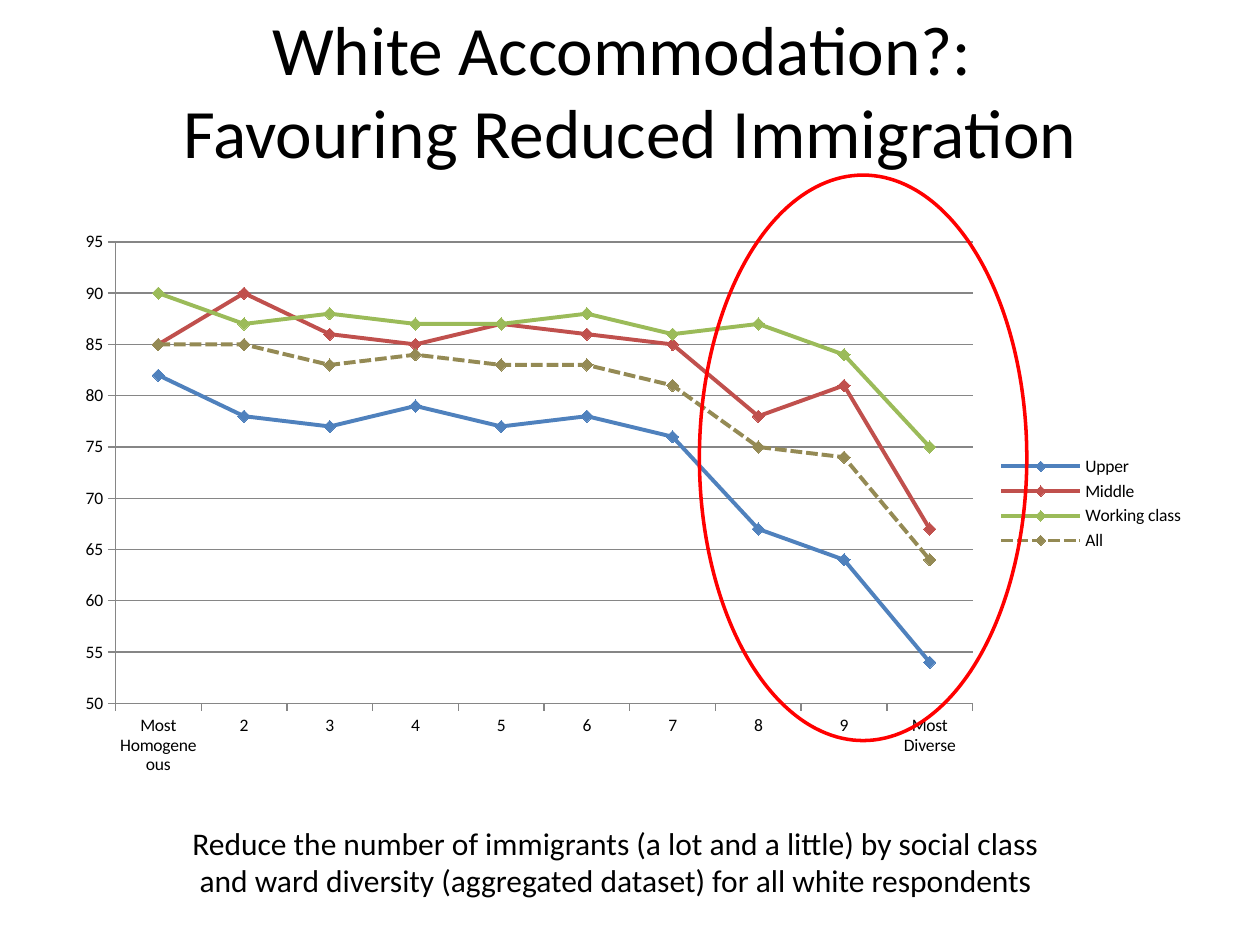
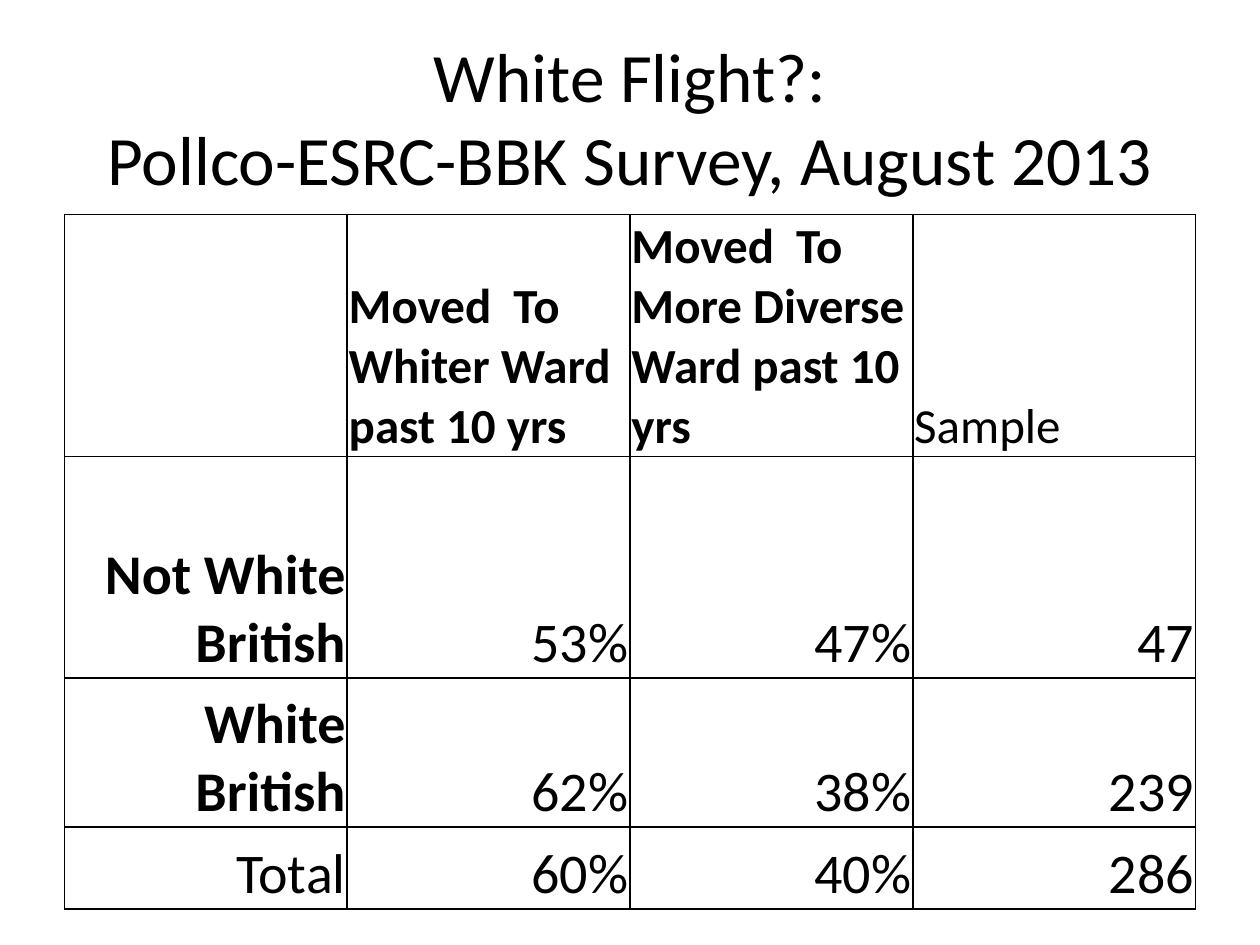
from dataclasses import dataclass

from lxml.etree import SubElement
from pptx import Presentation
from pptx.chart.data import CategoryChartData
from pptx.dml.color import RGBColor
from pptx.enum.chart import XL_CHART_TYPE as ChartType
from pptx.enum.chart import XL_LEGEND_POSITION as LegendPosition
from pptx.enum.chart import XL_MARKER_STYLE as MarkerStyle
from pptx.enum.chart import XL_TICK_MARK as TickMark
from pptx.enum.dml import MSO_LINE as Dash
from pptx.enum.shapes import MSO_SHAPE as Preset
from pptx.enum.text import MSO_ANCHOR as Anchor
from pptx.enum.text import MSO_AUTO_SIZE as AutoSize
from pptx.enum.text import PP_ALIGN as Align
from pptx.oxml.ns import qn
from pptx.util import Cm, Pt


@dataclass(frozen=True)
class Theme:
    font: str = "Calibri"
    ink: RGBColor = RGBColor(0, 0, 0)
    grid: RGBColor = RGBColor(0x86, 0x86, 0x86)
    highlight: RGBColor = RGBColor(0xFF, 0, 0)
    upper: RGBColor = RGBColor(0x4F, 0x81, 0xBD)
    middle: RGBColor = RGBColor(0xC0, 0x50, 0x4D)
    working: RGBColor = RGBColor(0x9B, 0xBB, 0x59)
    everyone: RGBColor = RGBColor(0x94, 0x8A, 0x54)
    title_size: float = 39.6
    caption_size: int = 18
    chart_size: int = 10
    header_size: int = 28
    body_size: int = 32


THEME = Theme()
MARGIN, CONTENT_WIDTH = 1.27, 22.86

WARDS = ["Most Homogeneous", *map(str, range(2, 10)), "Most Diverse"]
CLASS_SUPPORT = [
    ("Upper", THEME.upper, (82, 78, 77, 79, 77, 78, 76, 67, 64, 54)),
    ("Middle ", THEME.middle, (85, 90, 86, 85, 87, 86, 85, 78, 81, 67)),
    ("Working class", THEME.working, (90, 87, 88, 87, 87, 88, 86, 87, 84, 75)),
    ("All", THEME.everyone, (85, 85, 83, 84, 83, 83, 81, 75, 74, 64)),
]
MOVES = [
    ("", "Moved  To Whiter Ward past 10 yrs",
     "Moved  To More Diverse Ward past 10 yrs", "Sample"),
    ("Not White British", "53%", "47%", "47"),
    ("White British", "62%", "38%", "239"),
    ("Total", "60%", "40%", "286"),
]
MOVE_ROW_HEIGHTS = (4.88, 4.47, 3, 1.65)


def box(left, top, width, height):
    return Cm(left), Cm(top), Cm(width), Cm(height)


def style_font(font, size, bold=False):
    font.name, font.size, font.bold = THEME.font, Pt(size), bold
    font.color.rgb = THEME.ink


def add_titled_slide(deck, title, height, bottom_inset=0.13):
    """A larger bottom inset lifts the middle-anchored title."""
    slide = deck.slides.add_slide(deck.slide_layouts[5])
    heading = slide.shapes.title
    heading.left, heading.top, heading.width, heading.height = box(
        MARGIN, 0.76, CONTENT_WIDTH, height)
    frame = heading.text_frame
    frame.text = title
    frame.auto_size = AutoSize.NONE
    frame.vertical_anchor = Anchor.MIDDLE
    frame.margin_bottom = Cm(bottom_inset)
    frame.paragraphs[0].alignment = Align.CENTER
    style_font(frame.paragraphs[0].font, THEME.title_size)
    return slide


def style_axes(chart):
    for axis in (chart.category_axis, chart.value_axis):
        axis.format.line.color.rgb = THEME.grid
        axis.major_tick_mark = TickMark.OUTSIDE
        axis.minor_tick_mark = TickMark.NONE
    support = chart.value_axis
    support.minimum_scale, support.maximum_scale, support.major_unit = 50, 95, 5
    support.tick_labels.number_format = "#,##0"
    support.tick_labels.number_format_is_linked = False
    support.has_major_gridlines = True
    support.major_gridlines.format.line.color.rgb = THEME.grid


def add_support_chart(slide):
    data = CategoryChartData(number_format="#,##0")
    data.categories = WARDS
    for name, _, values in CLASS_SUPPORT:
        data.add_series(name, values)
    chart = slide.shapes.add_chart(
        ChartType.LINE_MARKERS, *box(MARGIN, 4.45, CONTENT_WIDTH, 11.4), data).chart
    chart.has_title = False
    style_font(chart.font, THEME.chart_size)
    chart.has_legend = True
    chart.legend.position = LegendPosition.RIGHT
    chart.legend.include_in_layout = False
    style_axes(chart)

    plot = chart.plots[0]
    plot.vary_by_categories = False
    for series, (name, color, _) in zip(plot.series, CLASS_SUPPORT):
        series.smooth = False
        series.format.line.color.rgb = color
        series.format.line.width = Pt(2.25)
        if name == "All":
            series.format.line.dash_style = Dash.SQUARE_DOT
        marker = series.marker
        marker.style, marker.size = MarkerStyle.DIAMOND, 7
        marker.format.fill.solid()
        marker.format.fill.fore_color.rgb = color
        marker.format.line.color.rgb = color


def add_highlight_ring(slide, left, top, width, height):
    ring = slide.shapes.add_shape(Preset.OVAL, *box(left, top, width, height))
    ring.shadow.inherit = False
    ring.fill.background()
    ring.line.color.rgb = THEME.highlight
    ring.line.width = Pt(2)


def add_caption(slide, lines):
    frame = slide.shapes.add_textbox(*box(3.63, 16.48, 17.78, 1.8)).text_frame
    frame.word_wrap = False
    frame.auto_size = AutoSize.SHAPE_TO_FIT_TEXT
    frame.text = "\n".join(lines)
    for line in frame.paragraphs:
        style_font(line.font, THEME.caption_size)


def outline_cell(cell):
    properties = cell._tc.get_or_add_tcPr()
    for position, side in enumerate(("a:lnL", "a:lnR", "a:lnT", "a:lnB")):
        border = SubElement(properties, qn(side), w=str(Pt(1)))
        fill = SubElement(border, qn("a:solidFill"))
        SubElement(fill, qn("a:srgbClr"), val=str(THEME.ink))
        properties.insert(position, border)


def fill_cell(cell, text, size, bold, alignment):
    cell.fill.background()
    outline_cell(cell)
    cell.vertical_anchor = Anchor.BOTTOM
    cell.margin_left = cell.margin_right = cell.margin_top = Cm(0.03)
    cell.margin_bottom = 0
    cell.text = text
    paragraph = cell.text_frame.paragraphs[0]
    paragraph.alignment = alignment
    style_font(paragraph.font, size, bold)


def add_moves_table(slide):
    column_width = 5.7
    table = slide.shapes.add_table(
        len(MOVES), len(MOVES[0]),
        *box(1.3, 4.32, column_width * len(MOVES[0]), sum(MOVE_ROW_HEIGHTS))).table
    table.first_row = table.horz_banding = False
    for column in table.columns:
        column.width = Cm(column_width)
    for r, (texts, height) in enumerate(zip(MOVES, MOVE_ROW_HEIGHTS)):
        table.rows[r].height = Cm(height)
        for c, text in enumerate(texts):
            is_header = r == 0
            bold = text.startswith("Moved") or text.endswith("British")
            fill_cell(table.cell(r, c), text,
                      THEME.header_size if is_header else THEME.body_size,
                      bold, Align.LEFT if is_header else Align.RIGHT)


def main():
    deck = Presentation()
    deck.slide_width, deck.slide_height = Cm(25.4), Cm(19.05)

    accommodation = add_titled_slide(
        deck, "White Accommodation?: \vFavouring Reduced Immigration",
        height=3.76, bottom_inset=1.8)
    add_support_chart(accommodation)
    add_highlight_ring(accommodation, 14.1, 3.53, 6.6, 11.4)
    add_caption(accommodation, (
        "Reduce the number of immigrants (a lot and a little) by social class",
        " and ward diversity (aggregated dataset) for all white respondents"))

    flight = add_titled_slide(
        deck, "White Flight?:\vPollco-ESRC-BBK Survey, August 2013", height=3.18)
    add_moves_table(flight)

    deck.save("out.pptx")


if __name__ == "__main__":
    main()
